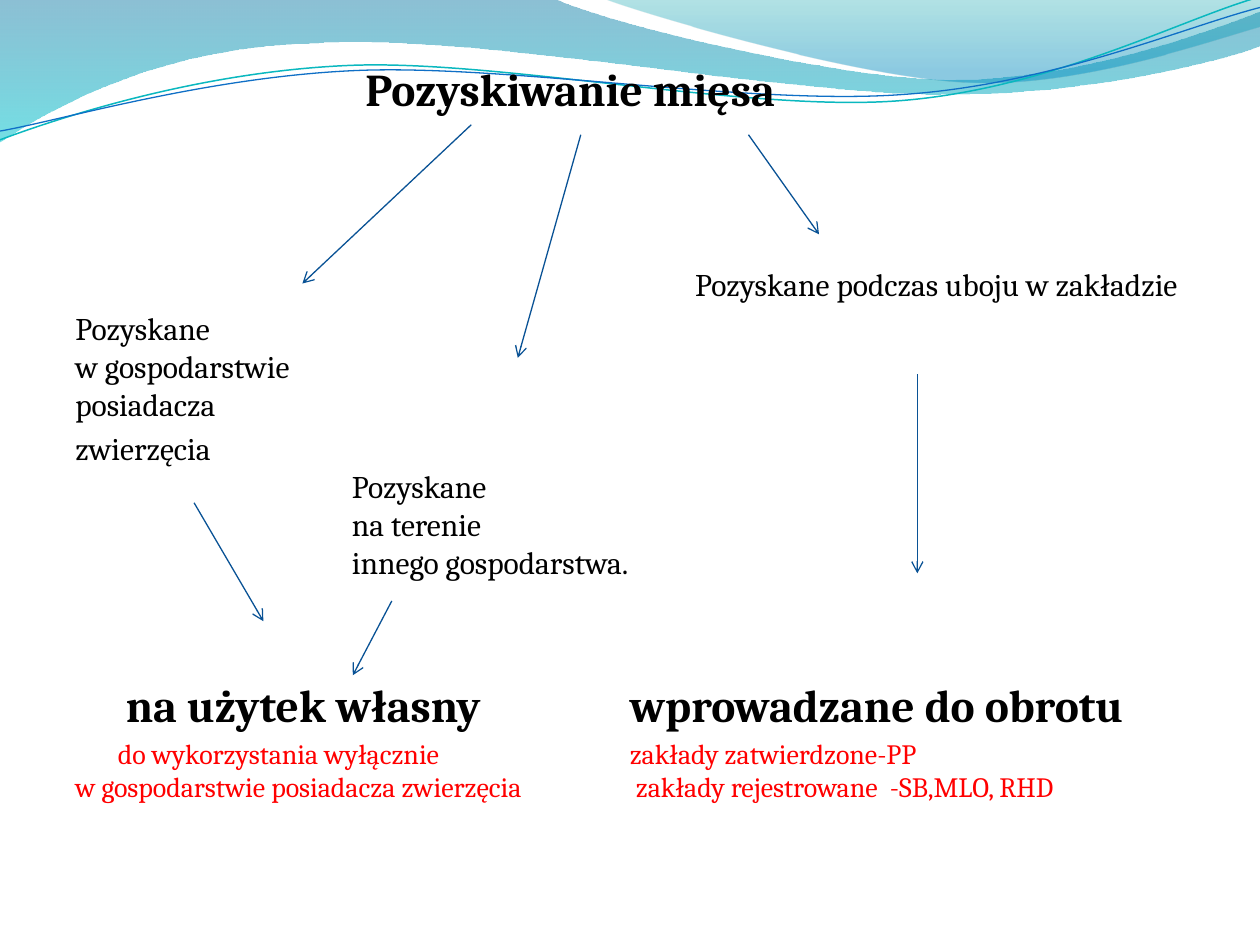
import math
from dataclasses import dataclass

import pptx
import pptx.dml.color
import pptx.enum.shapes
import pptx.enum.text
import pptx.oxml
import pptx.oxml.ns
import pptx.util

Pt = pptx.util.Pt
RGBColor = pptx.dml.color.RGBColor
PP_ALIGN = pptx.enum.text.PP_ALIGN
qn = pptx.oxml.ns.qn

BLACK = RGBColor(0x00, 0x00, 0x00)
RED = RGBColor(0xFF, 0x00, 0x00)
ARROW_BLUE = RGBColor(0x09, 0x52, 0x95)
TEAL = RGBColor(0x0A, 0xB8, 0xBF)
BLUE = RGBColor(0x0F, 0x6F, 0xC6)
WAVE_BLUE = RGBColor(0x00, 0x74, 0xA1)
WAVE_CYAN = RGBColor(0x00, 0xC6, 0xCF)
CREST_TEAL = RGBColor(0x00, 0xA1, 0xA9)
CREST_BLUE = RGBColor(0x00, 0x8B, 0xBF)

FONT = "Cambria"
LINE_HEIGHT = {26: 31, 18: 21.7, 16: 18.9}
RIGHT_COLUMN = 316.8

Point = tuple[float, float]


@dataclass
class Stop:
    pos: int
    color: RGBColor
    opacity: int


@dataclass
class Wave:
    start: Point
    segments: list[tuple[float, ...]]
    stops: tuple[Stop, ...] = ()
    line: RGBColor | None = None
    line_width: float = 0
    rotation: float = 0
    pivot: Point = (0, 0)


@dataclass
class Para:
    text: str
    size: int = 18
    bold: bool = False
    color: RGBColor = BLACK
    before: float = 3.4
    tabs: tuple[float, ...] = ()
    align: PP_ALIGN = PP_ALIGN.LEFT


@dataclass
class Arrow:
    start: Point
    end: Point


WAVES = [
    Wave((0, 0), [
        (316.8, -0.7),
        (342.7, 12.2, 478.1, 45.4, 545.8, 45.4),
        (614.2, 45.4, 689.8, 18.7, 720, 6.5),
        (720.7, 25.9),
        (707.8, 31.7, 626.4, 54.7, 537.1, 54),
        (446.4, 54, 275, 20.2, 185, 24.5),
        (92.9, 25.9, 33.1, 59.8, -0.7, 81.4),
        (0, 0),
    ], stops=(Stop(0, WAVE_BLUE, 45), Stop(100, WAVE_CYAN, 55))),
    Wave((344.9, -0.7), [
        (366.5, 7.9, 491, 44.6, 553.7, 46.8),
        (616.3, 49.7, 691.9, 23, 720, 15.1),
        (720, 0),
        (344.9, -0.7),
    ], stops=(Stop(0, CREST_TEAL, 30), Stop(80, CREST_BLUE, 45))),
    Wave((0, 79.9), [
        (34.6, 67, 113.8, 41, 199.4, 37.4),
        (284.4, 33.8, 427, 64.1, 513.4, 57.6),
        (599.8, 51.1, 675.4, 10.8, 718.6, -1.4),
    ], line=TEAL, line_width=0.85, rotation=357.3, pivot=(359.3, 41.4)),
    Wave((0, 74.9), [
        (33.8, 69.1, 118.1, 43.9, 203.8, 40.3),
        (290.2, 36.7, 429.8, 60.5, 516.2, 54),
        (601.9, 48.2, 677.5, 15.1, 720, 4.3),
    ], line=BLUE, line_width=0.75, rotation=357.3, pivot=(359.6, 42.5)),
]

PARAS = [
    Para("\tPozyskiwanie mięsa", 26, True, before=0, tabs=(165.8,)),
    Para("Pozyskane podczas uboju w zakładzie ", before=85.1, align=PP_ALIGN.RIGHT),
    Para("Pozyskane\vw gospodarstwie\vposiadacza"),
    Para("zwierzęcia\v\tPozyskane\v\tna terenie\v\tinnego gospodarstwa.", tabs=(158,)),
    Para("\tna użytek własny\twprowadzane do obrotu", 26, True, before=55.1,
         tabs=(28.8, RIGHT_COLUMN)),
    Para("\tdo wykorzystania wyłącznie\tzakłady zatwierdzone-PP\v"
         "w gospodarstwie posiadacza zwierzęcia\t zakłady rejestrowane  -SB,MLO, RHD",
         16, color=RED, tabs=(24.3, RIGHT_COLUMN)),
]

ARROWS = [
    Arrow((427.7, 77), (468, 133.9)),
    Arrow((269.3, 71.3), (172.8, 162)),
    Arrow((331.9, 77), (295.9, 204.5)),
    Arrow((524.2, 213.8), (524.2, 327.6)),
    Arrow((110.9, 287.3), (150.5, 355)),
    Arrow((223.9, 343.4), (201.6, 385.9)),
]


def unrotate(point: Point, wave: Wave) -> Point:
    angle = math.radians(-wave.rotation)
    dx, dy = point[0] - wave.pivot[0], point[1] - wave.pivot[1]
    return (wave.pivot[0] + dx * math.cos(angle) - dy * math.sin(angle),
            wave.pivot[1] + dx * math.sin(angle) + dy * math.cos(angle))


def bend_segments(sp, segments: list[tuple[float, ...]]) -> None:
    geometry = next(sp._element.iter(qn("a:pathLst")))[0]
    lines = iter(geometry.findall(qn("a:lnTo")))
    for seg in segments:
        first = next(lines)
        if len(seg) == 6:
            curve = geometry.makeelement(qn("a:cubicBezTo"), {})
            geometry.replace(first, curve)
            curve.append(first[0])
            for _ in range(2):
                line = next(lines)
                curve.append(line[0])
                geometry.remove(line)


def set_gradient(sp, stops: tuple[Stop, ...]) -> None:
    sp.fill.gradient()
    grad = sp._element.spPr.find(qn("a:gradFill"))
    gs_lst = grad.find(qn("a:gsLst"))
    for gs in list(gs_lst):
        gs_lst.remove(gs)
    for stop in stops:
        gs = gs_lst.makeelement(qn("a:gs"), {"pos": str(stop.pos * 1000)})
        clr = gs.makeelement(qn("a:srgbClr"), {"val": str(stop.color)})
        clr.append(clr.makeelement(qn("a:alpha"), {"val": str(stop.opacity * 1000)}))
        gs.append(clr)
        gs_lst.append(gs)
    grad.find(qn("a:lin")).set("ang", "5400000")


def draw_wave(s, wave: Wave) -> None:
    points = [wave.start]
    for seg in wave.segments:
        points += zip(seg[::2], seg[1::2])
    emu = [(Pt(x), Pt(y)) for x, y in (unrotate(point, wave) for point in points)]
    builder = s.shapes.build_freeform(*emu[0])
    builder.add_line_segments(emu[1:], close=bool(wave.stops))
    sp = builder.convert_to_shape()
    bend_segments(sp, wave.segments)
    sp.rotation = wave.rotation
    sp.shadow.inherit = False
    if wave.stops:
        set_gradient(sp, wave.stops)
    else:
        sp.fill.background()
    if wave.line is None:
        sp.line.fill.background()
    else:
        sp.line.color.rgb = wave.line
        sp.line.width = Pt(wave.line_width)


def format_para(p, para: Para) -> None:
    p.text = para.text
    p.alignment = para.align
    p.line_spacing = Pt(LINE_HEIGHT[para.size])
    p.space_before = Pt(para.before)
    if para.tabs:
        ppr = p._p.get_or_add_pPr()
        tab_lst = ppr.makeelement(qn("a:tabLst"), {})
        for pos in para.tabs:
            tab_lst.append(tab_lst.makeelement(
                qn("a:tab"), {"pos": str(Pt(pos)), "algn": "l"}))
        ppr.append(tab_lst)
    for r in p.runs:
        r.font.name = FONT
        r.font.size = Pt(para.size)
        r.font.bold = para.bold
        r.font.color.rgb = para.color


def draw_body(s, paras: list[Para]) -> None:
    sp = s.shapes.add_textbox(Pt(36), Pt(31.7), Pt(648), Pt(481.7))
    tf = sp.text_frame
    tf.word_wrap = True
    for i, para in enumerate(paras):
        format_para(tf.add_paragraph() if i else tf.paragraphs[0], para)


def draw_arrow(s, arrow: Arrow) -> None:
    ends = [Pt(v) for v in (*arrow.start, *arrow.end)]
    cx = s.shapes.add_connector(pptx.enum.shapes.MSO_CONNECTOR.STRAIGHT, *ends)
    cx.line.color.rgb = ARROW_BLUE
    cx.line.width = Pt(0.75)
    sp_pr = cx._element.spPr
    ln = sp_pr.find(qn("a:ln"))
    ln.append(ln.makeelement(qn("a:tailEnd"), {"type": "arrow"}))
    sp_pr.append(sp_pr.makeelement(qn("a:effectLst"), {}))


def main() -> None:
    prs = pptx.Presentation()
    prs.slide_width, prs.slide_height = Pt(720), Pt(540)
    s = prs.slides.add_slide(prs.slide_layouts[6])
    for wave in WAVES:
        draw_wave(s, wave)
    draw_body(s, PARAS)
    for arrow in ARROWS:
        draw_arrow(s, arrow)
    prs.save("out.pptx")


if __name__ == "__main__":
    main()
